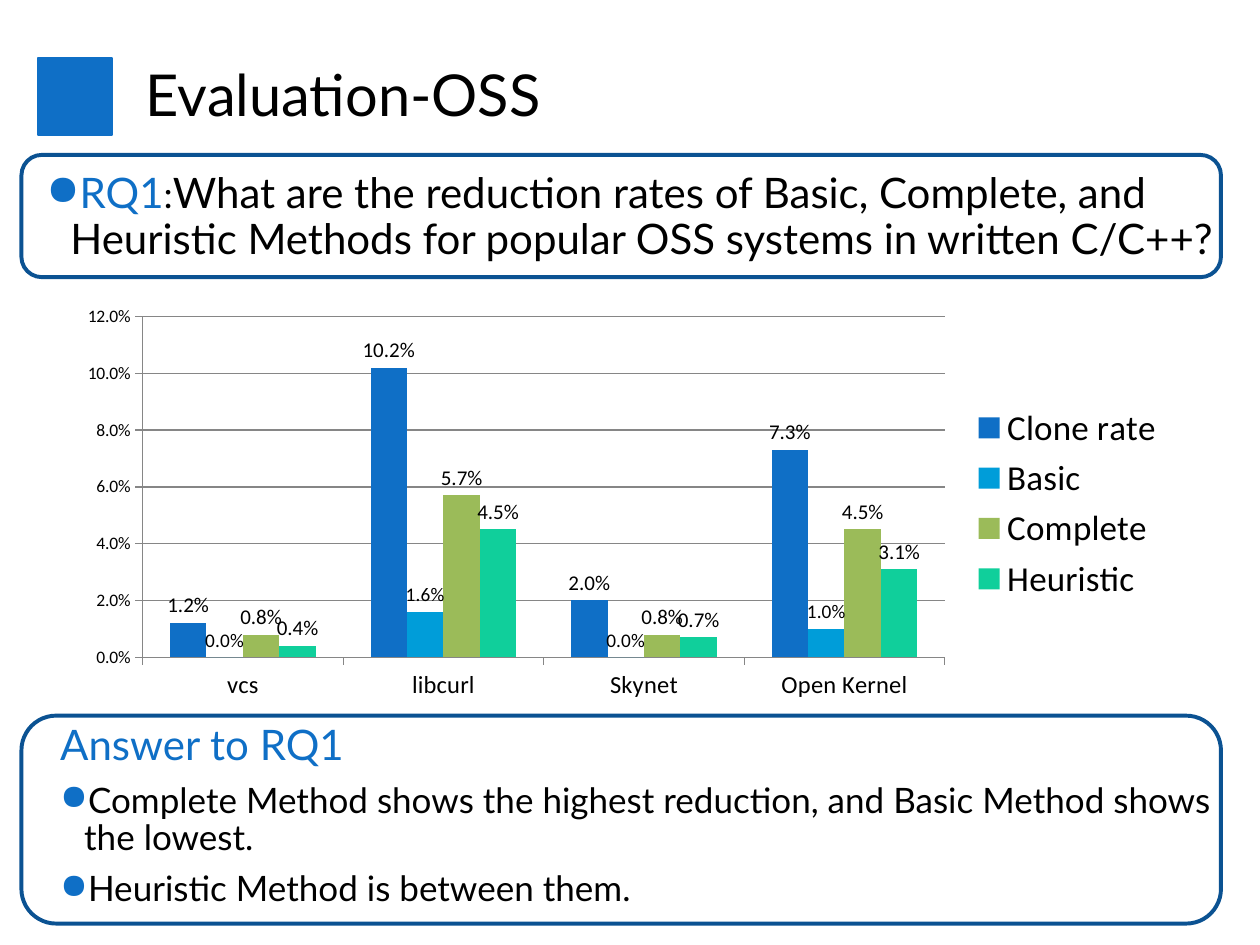
from dataclasses import dataclass

from lxml.etree import SubElement
from pptx import Presentation
from pptx.chart.data import CategoryChartData
from pptx.dml.color import RGBColor
from pptx.enum.chart import XL_CHART_TYPE, XL_LABEL_POSITION, XL_LEGEND_POSITION, XL_TICK_MARK
from pptx.enum.shapes import MSO_SHAPE
from pptx.enum.text import MSO_ANCHOR, PP_ALIGN
from pptx.oxml.ns import qn
from pptx.util import Inches, Pt


@dataclass(frozen=True)
class Theme:
    accent: RGBColor = RGBColor(0x0F, 0x6F, 0xC6)
    frame: RGBColor = RGBColor(0x0B, 0x52, 0x92)
    ink: RGBColor = RGBColor(0, 0, 0)
    grid: RGBColor = RGBColor(0x86, 0x86, 0x86)
    text_font: str = "Lato"
    chart_font: str = "Calibri"
    title: int = 33
    heading: int = 24
    colon: int = 21
    body: int = 20
    legend: int = 20
    category: int = 14
    scale: int = 10


THEME = Theme()

SYSTEMS = ["vcs", "libcurl", "Skynet", "Open Kernel"]
# name, reduction rates, colour, label size
RATES = [
    ("Clone rate", (0.012, 0.102, 0.02, 0.073), THEME.accent, 12),
    ("Basic", (0, 0.016, 0, 0.01), RGBColor(0x00, 0x9D, 0xD9), 11),
    ("Complete", (0.008, 0.057, 0.008, 0.045), RGBColor(0x9B, 0xBB, 0x59), 12),
    ("Heuristic", (0.004, 0.045, 0.007, 0.031), RGBColor(0x10, 0xCF, 0x9B), 12),
]


def style_font(font, size, color=THEME.ink, name=THEME.text_font):
    font.size, font.name = Pt(size), name
    font.color.rgb = color


def add_bullet(paragraph):
    properties = paragraph._p.get_or_add_pPr()
    indent = Inches(0.19)
    properties.set("marL", str(indent))
    properties.set("indent", str(-indent))
    color = SubElement(properties, qn("a:buClr"))
    SubElement(color, qn("a:srgbClr")).set("val", str(THEME.accent))
    SubElement(properties, qn("a:buChar")).set("char", "●")


def add_text(slide, left, top, width, height, paragraphs, space_before=7.5):
    """Each paragraph is (bulleted, [(text, size, colour), ...])."""
    frame = slide.shapes.add_textbox(
        Inches(left), Inches(top), Inches(width), Inches(height)).text_frame
    frame.word_wrap = True
    for index, (bulleted, pieces) in enumerate(paragraphs):
        paragraph = frame.add_paragraph() if index else frame.paragraphs[0]
        paragraph.alignment = PP_ALIGN.LEFT
        paragraph.line_spacing = 0.9
        paragraph.space_before = Pt(space_before)
        if bulleted:
            add_bullet(paragraph)
        for text, size, color in pieces:
            run = paragraph.add_run()
            run.text = text
            style_font(run.font, size, color)
    return frame


def add_frame(slide, left, top, width, height):
    outline = slide.shapes.add_shape(
        MSO_SHAPE.ROUNDED_RECTANGLE, Inches(left), Inches(top), Inches(width), Inches(height))
    outline.shadow.inherit = False
    outline.fill.background()
    outline.line.color.rgb = THEME.frame
    outline.line.width = Pt(2.25)


def add_header(slide, left, top, width, height):
    marker = slide.shapes.add_shape(
        MSO_SHAPE.RECTANGLE, Inches(left), Inches(top + 0.06), Inches(0.59), Inches(0.61))
    marker.shadow.inherit = False
    marker.fill.solid()
    marker.fill.fore_color.rgb = THEME.accent
    marker.line.color.rgb = THEME.accent
    marker.line.width = Pt(1)
    title = add_text(slide, left + 0.76, top, width - 0.76, height,
                     [(False, [("Evaluation-OSS", THEME.title, THEME.ink)])], space_before=0)
    title.vertical_anchor = MSO_ANCHOR.MIDDLE


def add_question(slide, left, top, width, height):
    add_text(slide, left + 0.1, top + 0.09, width - 0.02, height - 0.09, [(True, [
        ("RQ1", THEME.heading, THEME.accent),
        (":", THEME.colon, THEME.ink),
        ("What are the reduction rates of Basic, Complete, and Heuristic Methods "
         "for popular OSS systems in written C/C++?", THEME.heading, THEME.ink),
    ])])
    add_frame(slide, left, top, width, height)


def add_answer(slide, left, top, width, height):
    findings = [
        "Complete Method shows the highest reduction, and Basic Method shows the lowest.",
        "Heuristic Method is between them.",
    ]
    add_text(slide, left + 0.21, top + 0.02, width - 0.02, height - 0.02,
             [(False, [("Answer to RQ1", THEME.heading, THEME.accent)])]
             + [(True, [(finding, THEME.body, THEME.ink)]) for finding in findings])
    add_frame(slide, left, top, width, height)


def style_axes(chart):
    for axis, size in ((chart.category_axis, THEME.category), (chart.value_axis, THEME.scale)):
        style_font(axis.tick_labels.font, size, name=THEME.chart_font)
        axis.major_tick_mark = XL_TICK_MARK.OUTSIDE
        axis.minor_tick_mark = XL_TICK_MARK.NONE
        axis.format.line.color.rgb = THEME.grid
    scale = chart.value_axis
    scale.minimum_scale, scale.maximum_scale, scale.major_unit = 0, 0.12, 0.02
    scale.tick_labels.number_format = "0.0%"
    scale.tick_labels.number_format_is_linked = False
    scale.has_major_gridlines = True
    scale.major_gridlines.format.line.color.rgb = THEME.grid


def add_rate_chart(slide, left, top, width, height):
    data = CategoryChartData(number_format="0.0%")
    data.categories = SYSTEMS
    for name, values, _, _ in RATES:
        data.add_series(name, values)
    chart = slide.shapes.add_chart(
        XL_CHART_TYPE.COLUMN_CLUSTERED, Inches(left), Inches(top),
        Inches(width), Inches(height), data).chart
    style_font(chart.font, THEME.scale, name=THEME.chart_font)
    chart.has_title = False
    chart.has_legend = True
    chart.legend.position = XL_LEGEND_POSITION.RIGHT
    chart.legend.include_in_layout = False
    style_font(chart.legend.font, THEME.legend, name=THEME.chart_font)
    style_axes(chart)
    plot = chart.plots[0]
    plot.vary_by_categories = False
    plot.gap_width, plot.overlap = 150, 0
    for series, (_, _, color, label_size) in zip(plot.series, RATES):
        series.format.fill.solid()
        series.format.fill.fore_color.rgb = color
        series.invert_if_negative = False
        labels = series.data_labels
        labels.show_value = True
        labels.position = XL_LABEL_POSITION.OUTSIDE_END
        labels.number_format = "0.0%"
        labels.number_format_is_linked = False
        style_font(labels.font, label_size, name=THEME.chart_font)


def main():
    presentation = Presentation()
    presentation.slide_width, presentation.slide_height = Inches(10), Inches(7.5)
    slide = presentation.slides.add_slide(presentation.slide_layouts[6])
    add_header(slide, 0.3, 0.4, 9.46, 0.75)
    add_question(slide, 0.17, 1.23, 9.52, 0.97)
    add_rate_chart(slide, 0.52, 2.37, 8.83, 3.25)
    add_answer(slide, 0.17, 5.68, 9.52, 1.65)
    presentation.save("out.pptx")


if __name__ == "__main__":
    main()
